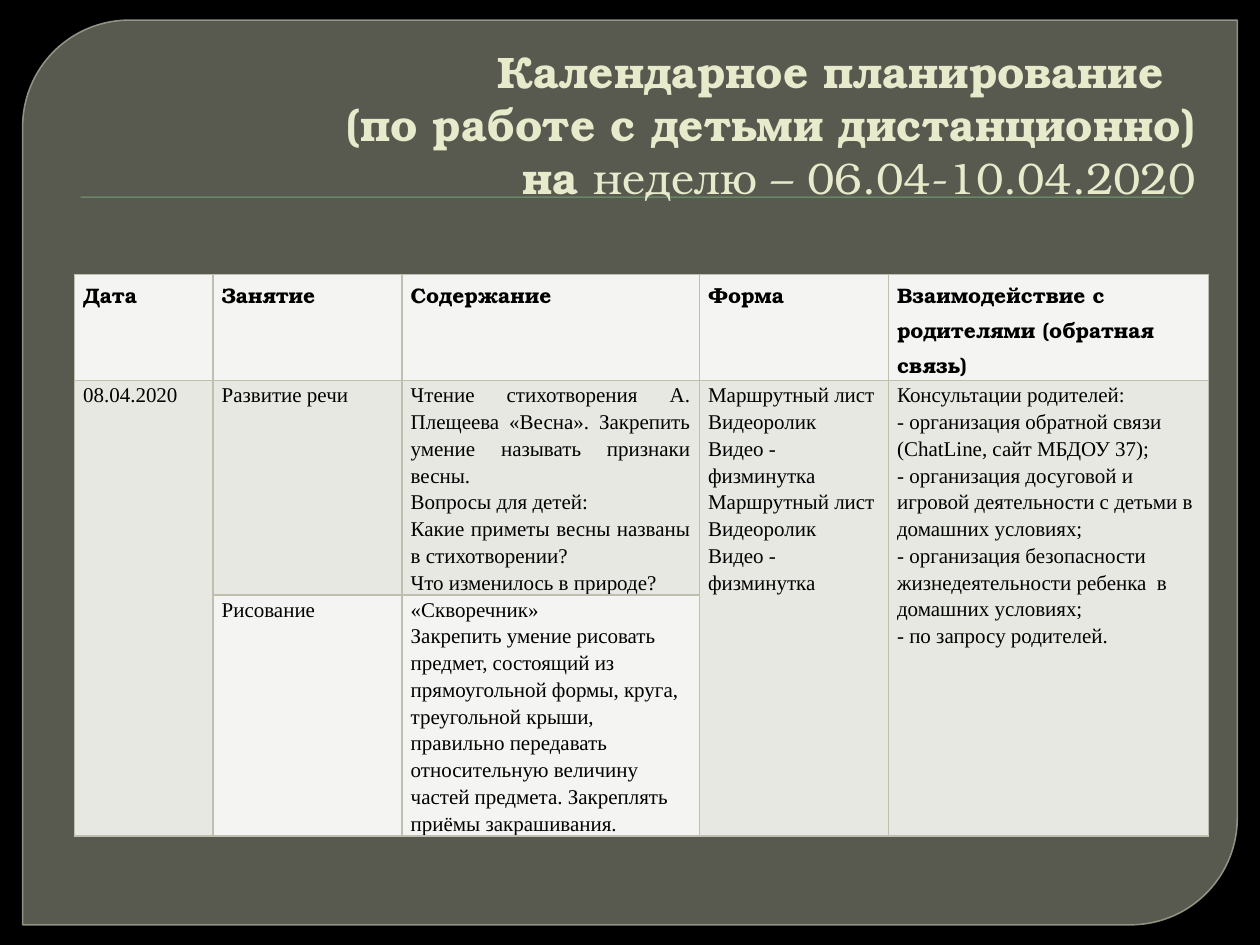
from lxml.etree import SubElement
from pptx import Presentation
from pptx.dml.color import RGBColor
from pptx.enum.shapes import MSO_SHAPE
from pptx.enum.text import MSO_ANCHOR, MSO_AUTO_SIZE, PP_ALIGN
from pptx.oxml.ns import qn
from pptx.util import Inches, Pt

TITLE_FONT = "TeX Gyre Bonum"
BODY_FONT = "Times New Roman"
BLACK = RGBColor(0x00, 0x00, 0x00)
PANEL = RGBColor(0x88, 0x8B, 0x7B)
PANEL_EDGE = RGBColor(0x9D, 0xA0, 0x90)
GREEN = RGBColor(0x72, 0xA3, 0x76)
CREAM = RGBColor(0xE7, 0xEA, 0xCB)
LIGHT = RGBColor(0xF4, 0xF4, 0xF2)
SHADED = RGBColor(0xE8, 0xE8, 0xE3)
BORDER = RGBColor(0xC0, 0xBE, 0xAF)

TITLE_LINES = [
    (0.25, [("Календарное планирование", True)]),
    (0, [("(по работе с детьми дистанционно)", True)]),
    (0, [("на ", True), ("неделю – 06.04-10.04.2020", False)]),
]
HEADERS = ["Дата", "Занятие", "Содержание", "Форма",
           "Взаимодействие с родителями (обратная связь)"]
FORMATS = ["Маршрутный лист", "Видеоролик", "Видео - физминутка"]
SPEECH = [
    "Чтение стихотворения А. Плещеева «Весна». Закрепить умение называть признаки весны.",
    "Вопросы для детей:",
    "Какие приметы весны названы в стихотворении?",
    "Что изменилось в природе?",
]
DRAWING = [
    "«Скворечник»",
    "Закрепить умение рисовать предмет, состоящий из прямоугольной формы, круга, "
    "треугольной крыши, правильно передавать относительную величину частей предмета. "
    "Закреплять приёмы закрашивания.",
]
PARENTS = [
    "Консультации родителей:",
    "- организация обратной связи (ChatLine, сайт МБДОУ 37);",
    "- организация досуговой и игровой деятельности с детьми в домашних условиях;",
    "- организация безопасности жизнедеятельности ребенка  в домашних условиях;",
    "- по запросу родителей.",
]
ROWS = [
    [[header] for header in HEADERS],
    [["08.04.2020"], ["Развитие речи"], SPEECH, FORMATS * 2, PARENTS],
    [[], ["Рисование"], DRAWING, [], []],
]
ROW_FILLS = [LIGHT, SHADED, LIGHT]
MERGED_COLUMNS = [0, 3, 4]
JUSTIFIED_CELL = (1, 2)
COLUMN_WIDTHS = [1.1, 1.5, 2.36, 1.5, 2.54]
ROW_HEIGHTS = [0.84, 1.7, 1.91]


def add_run(paragraph, text, font_name, size, color, bold):
    run = paragraph.add_run()
    run.text = text
    run.font.name = font_name
    run.font.size = Pt(size)
    run.font.color.rgb = color
    run.font.bold = bold


def set_opacity(fill_format, percent):
    color = fill_format._xPr.find(qn("a:solidFill"))[0]
    SubElement(color, qn("a:alpha"), val=str(percent * 1000))


def add_backdrop(slide):
    slide.background.fill.solid()
    slide.background.fill.fore_color.rgb = BLACK

    panel = slide.shapes.add_shape(MSO_SHAPE.ROUND_2_DIAG_RECTANGLE, Inches(0.18),
                                   Inches(0.16), Inches(9.64), Inches(7.18))
    panel.shadow.inherit = False
    panel.adjustments[0] = 0.118
    panel.adjustments[1] = 0
    panel.fill.solid()
    panel.fill.fore_color.rgb = PANEL
    set_opacity(panel.fill, 65)
    panel.line.color.rgb = PANEL_EDGE
    panel.line.width = Pt(0.87)
    set_opacity(panel.line.fill, 88)

    rule = slide.shapes.add_shape(MSO_SHAPE.RECTANGLE, Inches(0.64), Inches(1.56),
                                  Inches(8.75), Inches(0.01))
    rule.shadow.inherit = False
    rule.fill.solid()
    rule.fill.fore_color.rgb = GREEN
    rule.line.fill.background()


def fill_title(slide):
    title = slide.shapes.title
    slide.shapes._spTree.append(title._element)
    title.left, title.top = Inches(0.59), Inches(0.29)
    title.width, title.height = Inches(9), Inches(1.79)
    frame = title.text_frame
    frame.auto_size = MSO_AUTO_SIZE.NONE
    frame.vertical_anchor = MSO_ANCHOR.BOTTOM
    frame.margin_bottom = Inches(0.47)
    for index, (right_indent, runs) in enumerate(TITLE_LINES):
        paragraph = frame.paragraphs[0] if index == 0 else frame.add_paragraph()
        paragraph.alignment = PP_ALIGN.RIGHT
        paragraph._p.get_or_add_pPr().set("marR", str(Inches(right_indent)))
        for text, bold in runs:
            add_run(paragraph, text, TITLE_FONT, 25.2, CREAM, bold)


def add_borders(cell):
    properties = cell._tc.get_or_add_tcPr()
    for side in ("lnL", "lnR", "lnT", "lnB"):
        line = SubElement(properties, qn(f"a:{side}"), w=str(Pt(1)))
        fill = SubElement(line, qn("a:solidFill"))
        SubElement(fill, qn("a:srgbClr"), val=str(BORDER))


def add_plan(slide):
    table = slide.shapes.add_table(len(ROWS), len(HEADERS), Inches(0.59), Inches(2.18),
                                   Inches(sum(COLUMN_WIDTHS)),
                                   Inches(sum(ROW_HEIGHTS))).table
    for column, width in zip(table.columns, COLUMN_WIDTHS):
        column.width = Inches(width)
    for row, height in zip(table.rows, ROW_HEIGHTS):
        row.height = Inches(height)
    for column in MERGED_COLUMNS:
        table.cell(1, column).merge(table.cell(2, column))

    for row, contents in enumerate(ROWS):
        font_name = TITLE_FONT if row == 0 else BODY_FONT
        for column, lines in enumerate(contents):
            cell = table.cell(row, column)
            add_borders(cell)
            cell.fill.solid()
            cell.fill.fore_color.rgb = ROW_FILLS[row]
            cell.margin_left = cell.margin_right = Inches(0.07)
            cell.margin_top = cell.margin_bottom = 0
            frame = cell.text_frame
            for index, text in enumerate(lines):
                paragraph = frame.paragraphs[0] if index == 0 else frame.add_paragraph()
                paragraph.line_spacing = 1.15
                justified = (row, column) == JUSTIFIED_CELL
                paragraph.alignment = PP_ALIGN.JUSTIFY if justified else PP_ALIGN.LEFT
                add_run(paragraph, text, font_name, 12, BLACK, row == 0)


def main():
    presentation = Presentation()
    presentation.slide_width = Inches(10)
    presentation.slide_height = Inches(7.5)
    slide = presentation.slides.add_slide(presentation.slide_layouts[5])
    add_backdrop(slide)
    fill_title(slide)
    add_plan(slide)
    presentation.save("out.pptx")


if __name__ == "__main__":
    main()
